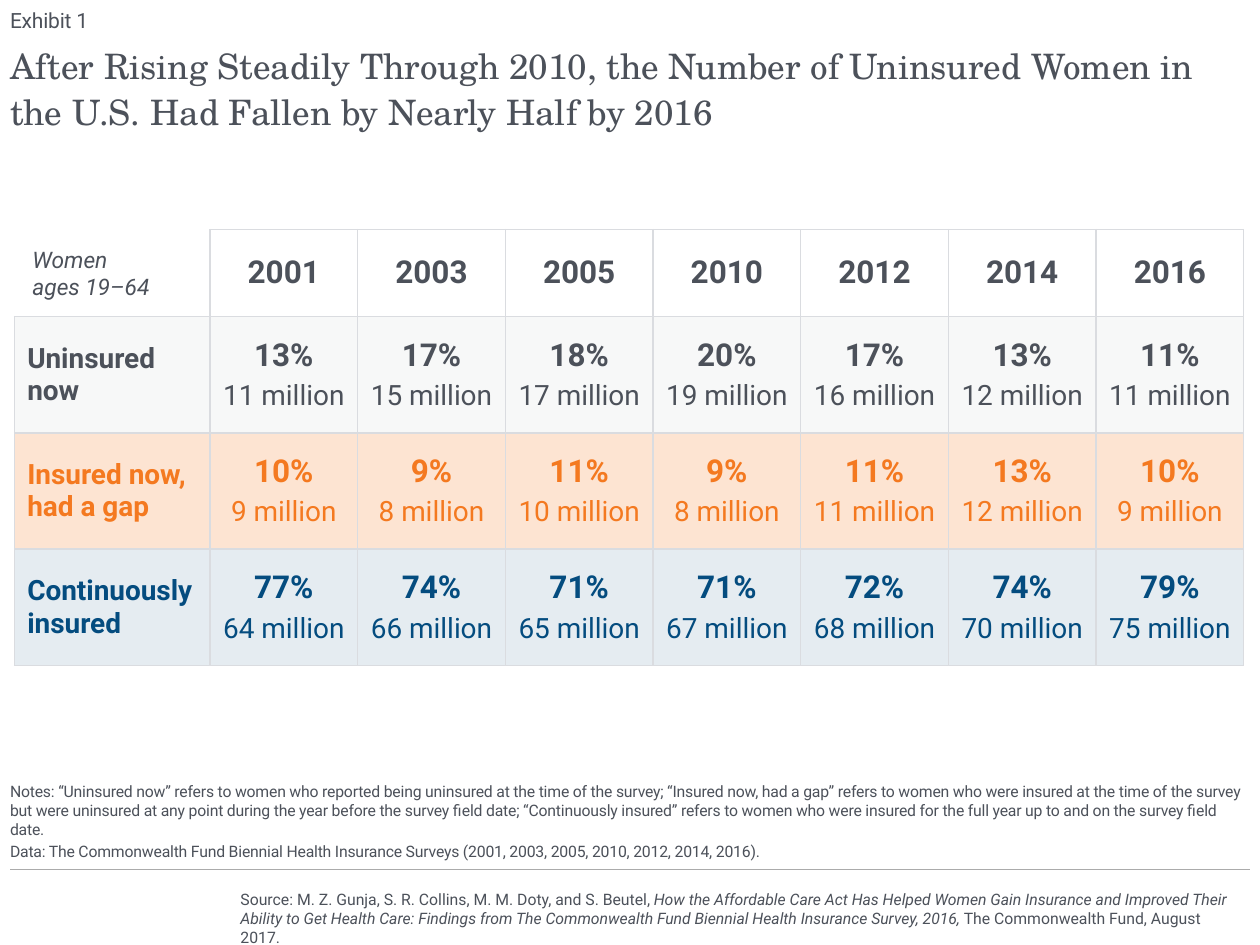
from lxml import etree
from pptx import Presentation
from pptx.dml.color import RGBColor
from pptx.enum import shapes, text
from pptx.oxml import ns
from pptx.util import Pt

THEME = {
    "font": "Roboto", "title_font": "TeX Gyre Schola",
    "ink": "4C515A", "rule": "ABABAB", "grid": "DADCE0", "white": "FFFFFF",
    "title": 20, "exhibit": 12, "note": 9, "caption": 13, "big": 18, "medium": 16,
}

EXHIBIT = "Exhibit 1"
TITLE = ("After Rising Steadily Through 2010, the Number of Uninsured Women "
         "in the U.S. Had Fallen by Nearly Half by 2016")
CAPTION = "Women\vages 19–64"
NOTES = [
    "Notes: “Uninsured now” refers to women who reported being uninsured at the time of the "
    "survey; “Insured now, had a gap” refers to women who were insured at the time of the survey "
    "but were uninsured at any point during the year before the survey field date; “Continuously "
    "insured” refers to women who were insured for the full year up to and on the survey field date.",
    "Data: The Commonwealth Fund Biennial Health Insurance Surveys "
    "(2001, 2003, 2005, 2010, 2012, 2014, 2016).",
]
SOURCE = [  # (words, italic)
    ("Source: M. Z. Gunja, S. R. Collins, M. M. Doty, and S. Beutel, ", False),
    ("How the Affordable Care Act Has Helped Women Gain Insurance and Improved Their Ability to "
     "Get Health Care: Findings from The Commonwealth Fund Biennial Health Insurance Survey, "
     "2016, ", True),
    ("The Commonwealth Fund, August 2017.", False),
]
YEARS = [2001, 2003, 2005, 2010, 2012, 2014, 2016]
GROUPS = [  # label, text colour, fill, opacity in %, percent by year, millions by year
    ("Uninsured now", "4C515A", "DADCE0", 20,
     [13, 17, 18, 20, 17, 13, 11], [11, 15, 17, 19, 16, 12, 11]),
    ("Insured now, had a gap", "F47920", "FDE4D2", 100,
     [10, 9, 11, 9, 11, 13, 10], [9, 8, 10, 8, 11, 12, 9]),
    ("Continuously insured", "044C7F", "044C7F", 10,
     [77, 74, 71, 71, 72, 74, 79], [64, 66, 65, 67, 68, 70, 75]),
]

MARGIN, CONTENT_W = 5.76, 708.48
TABLE_X, TABLE_Y = 8.4, 131.2
LABEL_W, YEAR_W = 111.6, 84.4
HEADER_H, GROUP_H = 49.7, 66.5


def style(p, size, color=THEME["ink"], font=THEME["font"], bold=False, italic=False, spacing=0):
    """Format every run; spacing is the tracking in hundredths of a point."""
    for r in p.runs:
        r.font.size, r.font.name = Pt(size), font
        r.font.bold, r.font.italic = bold, italic
        r.font.color.rgb = RGBColor.from_string(color)
        if spacing:
            r.font._element.set("spc", str(spacing))


def add_text(s, box, paragraphs, size, inset=(0, 0), anchor=text.MSO_ANCHOR.TOP, **look):
    tf = s.shapes.add_textbox(*map(Pt, box)).text_frame
    tf.word_wrap, tf.vertical_anchor = True, anchor
    tf.margin_left = tf.margin_right = Pt(inset[0])
    tf.margin_top = tf.margin_bottom = Pt(inset[1])
    tf.text = "\n".join(paragraphs)
    for i, p in enumerate(tf.paragraphs):
        if i:
            p.space_before = Pt(size * 0.2)
        style(p, size, **look)
    return tf


def set_borders(cell, **colors):
    tcPr = cell._tc.get_or_add_tcPr()
    for side in "LRTB":
        ln = etree.SubElement(tcPr, ns.qn(f"a:ln{side}"), w=str(Pt(1)))
        fill = etree.SubElement(ln, ns.qn("a:solidFill"))
        etree.SubElement(fill, ns.qn("a:srgbClr"), val=colors.get(side, THEME["grid"]))


def set_fill(cell, color, opacity):
    cell.fill.solid()
    cell.fill.fore_color.rgb = RGBColor.from_string(color)
    if opacity < 100:
        clr = cell._tc.tcPr.find(f"{ns.qn('a:solidFill')}/{ns.qn('a:srgbClr')}")
        etree.SubElement(clr, ns.qn("a:alpha"), val=str(opacity * 1000))


def write_cell(cell, lines, color, inset=None, align=text.PP_ALIGN.CENTER):
    """Fill a cell with (words, size, bold) lines."""
    cell.vertical_anchor = text.MSO_ANCHOR.MIDDLE
    if inset is not None:
        cell.margin_left = cell.margin_right = Pt(inset)
        cell.margin_top = cell.margin_bottom = Pt(inset)
    tf = cell.text_frame
    tf.text = "\n".join(words for words, _, _ in lines)
    for i, (p, (_, size, bold)) in enumerate(zip(tf.paragraphs, lines)):
        p.alignment = align
        if i:
            p.space_before = Pt(size * 0.2)
        style(p, size, color, bold=bold)


def add_insurance_table(s):
    rows, cols = len(GROUPS) + 1, len(YEARS) + 1
    width, height = LABEL_W + YEAR_W * len(YEARS), HEADER_H + GROUP_H * len(GROUPS)
    table = s.shapes.add_table(rows, cols, *map(Pt, (TABLE_X, TABLE_Y, width, height))).table
    table.first_row = table.horz_banding = False
    for i, col in enumerate(table.columns):
        col.width = Pt(YEAR_W if i else LABEL_W)
    for i, row in enumerate(table.rows):
        row.height = Pt(GROUP_H if i else HEADER_H)

    corner = table.cell(0, 0)
    for cell in table.iter_cells():
        edges = {"L": THEME["white"], "T": THEME["white"]} if cell == corner else {}
        set_borders(cell, **edges)
        cell.fill.background()

    big, medium = THEME["big"], THEME["medium"]
    for c, year in enumerate(YEARS, 1):
        write_cell(table.cell(0, c), [(str(year), big, True)], THEME["ink"], 3.6)
    for r, (label, color, fill, opacity, percents, millions) in enumerate(GROUPS, 1):
        write_cell(table.cell(r, 0), [(label, medium, True)], color, align=text.PP_ALIGN.LEFT)
        for c, (percent, million) in enumerate(zip(percents, millions), 1):
            lines = [(f"{percent}%", big, True), (f"{million} million", medium, False)]
            write_cell(table.cell(r, c), lines, color, 0.7)
        for c in range(cols):
            set_fill(table.cell(r, c), fill, opacity)


def add_rule(s, y):
    ln = s.shapes.add_connector(shapes.MSO_CONNECTOR.STRAIGHT, Pt(MARGIN), Pt(y),
                                Pt(MARGIN + CONTENT_W), Pt(y))
    ln.line.color.rgb = RGBColor.from_string(THEME["rule"])
    ln.line.width = Pt(0.75)
    etree.SubElement(ln._element.spPr, ns.qn("a:effectLst"))


def add_source(s):
    tf = add_text(s, (130.3, 504.7, 583.9, 28.8), [""], THEME["note"], (7.2, 3.6))
    p = tf.paragraphs[0]
    for words, _ in SOURCE:
        p.add_run().text = words
    style(p, THEME["note"])
    for r, (_, italic) in zip(p.runs, SOURCE):
        r.font.italic = italic


def main():
    prs = Presentation()
    prs.slide_width, prs.slide_height = Pt(720), Pt(540)
    s = prs.slides.add_slide(prs.slide_layouts[6])
    bottom = text.MSO_ANCHOR.BOTTOM

    add_rule(s, 496.8)
    add_source(s)
    title = add_text(s, (MARGIN, 23, CONTENT_W, 59.8), [TITLE], THEME["title"],
                     font=THEME["title_font"])
    title.paragraphs[0].line_spacing = 1.1
    add_text(s, (MARGIN, 0.7, CONTENT_W, 18), [EXHIBIT], THEME["exhibit"],
             anchor=bottom, spacing=-10)
    add_text(s, (MARGIN, 452.9, CONTENT_W, 38.9), NOTES, THEME["note"],
             anchor=bottom, spacing=-10)
    add_insurance_table(s)
    add_text(s, (11.5, 136.8, 105.1, 38.9), [CAPTION], THEME["caption"], (7.2, 3.6), italic=True)
    prs.save("out.pptx")


if __name__ == "__main__":
    main()
